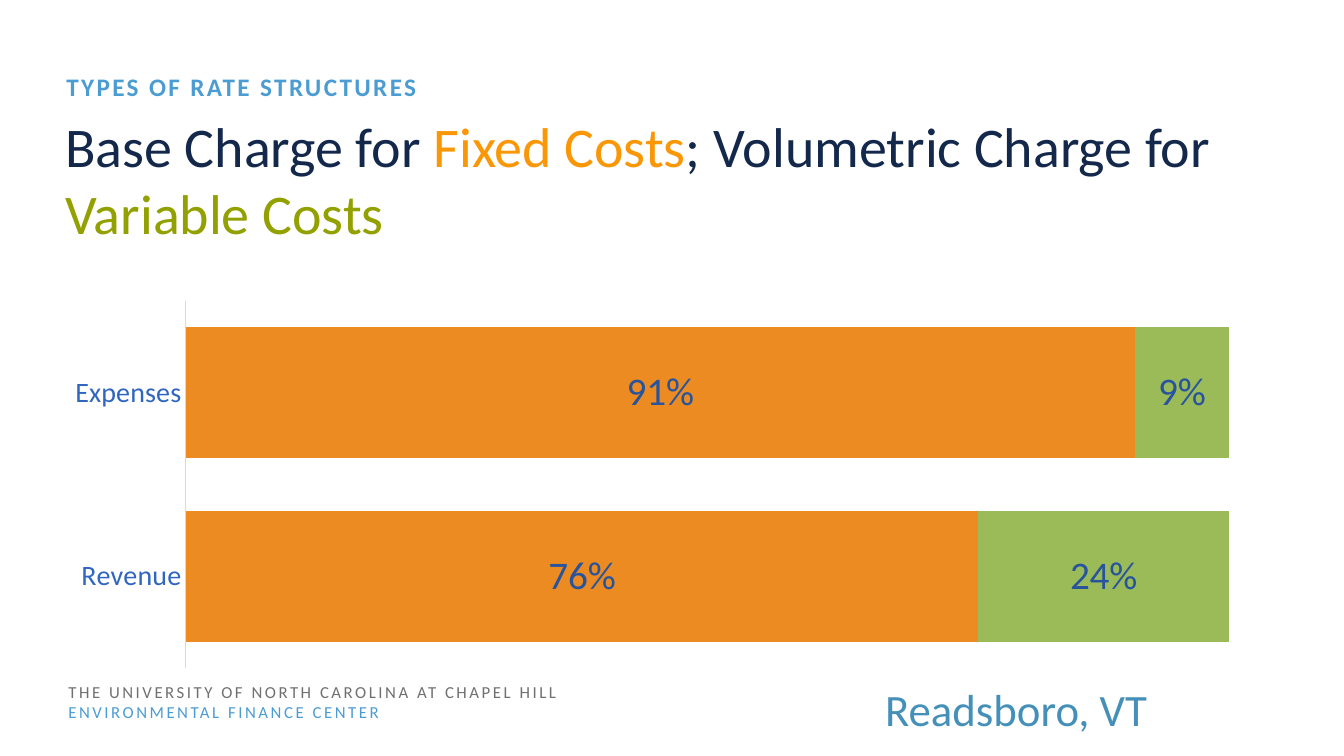
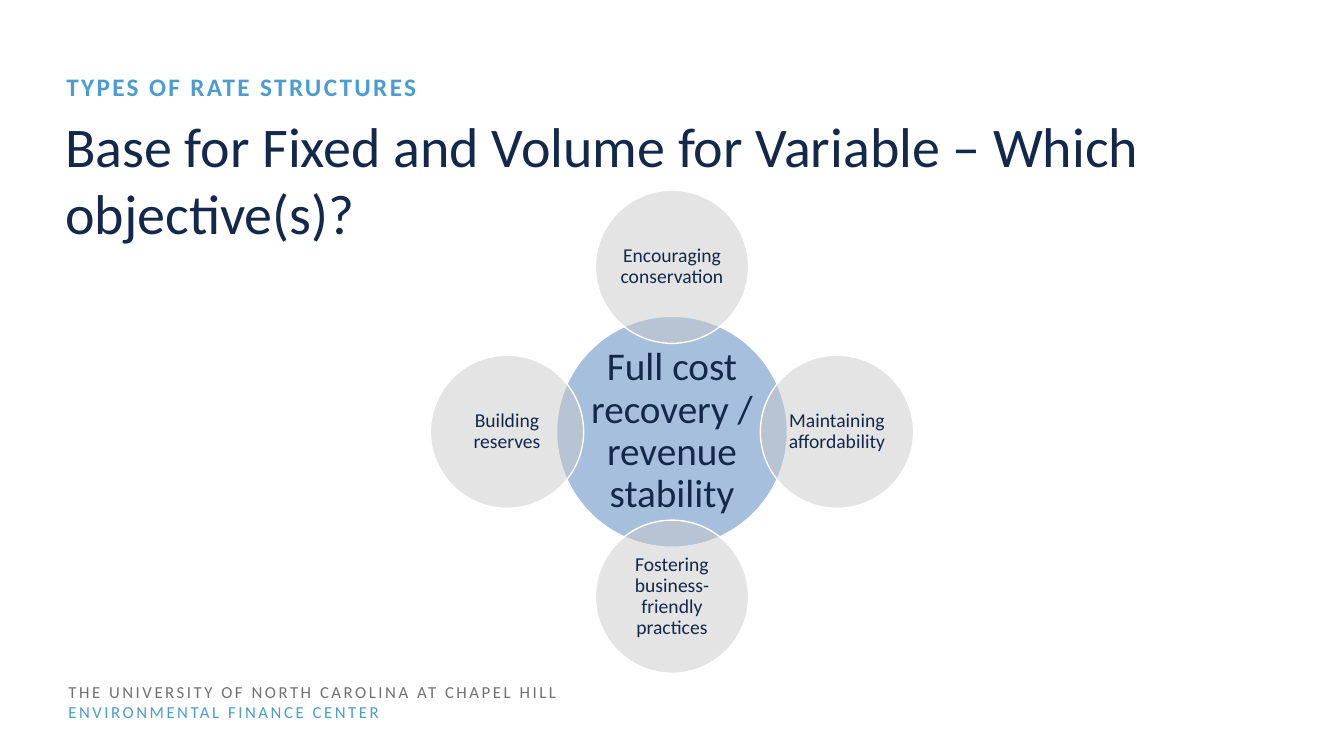
"""Build two slides on rate structures: a chart of cost shares and a ring of objectives."""

from dataclasses import dataclass

from lxml.etree import SubElement as add_element
from pptx import Presentation
from pptx.chart.data import CategoryChartData
from pptx.dml.color import RGBColor
from pptx.enum.chart import XL_CHART_TYPE as ChartType
from pptx.enum.chart import XL_LABEL_POSITION as LabelPosition
from pptx.enum.chart import XL_TICK_MARK as TickMark
from pptx.enum.shapes import MSO_SHAPE as Preset
from pptx.enum.text import MSO_ANCHOR as Anchor
from pptx.enum.text import PP_ALIGN as Align
from pptx.oxml.ns import qn
from pptx.util import Inches, Pt

COLUMNS, ROWS = 40, 22.5
CELL = Inches(1) / 3
BLANK_LAYOUT = 6


@dataclass(frozen=True)
class Theme:
    """Colours and type sizes of the deck."""

    font: str = "Calibri"
    navy: str = "13284B"
    sky: str = "4B9CD3"
    grey: str = "707070"
    orange: str = "FA9706"
    olive: str = "92A000"
    place: str = "4590B8"
    fixed_bar: str = "EB8B21"
    variable_bar: str = "9BBB59"
    bar_label: str = "28549E"
    category: str = "3066BF"
    axis: str = "CDDBF2"
    core: str = "4F81BD"
    satellite: str = "CACACA"
    white: str = "FFFFFF"
    title_size: int = 40
    place_size: int = 32
    large_size: int = 28
    category_size: int = 20
    kicker_size: int = 18
    small_size: int = 14
    footer_size: int = 12


THEME = Theme()


def grid(*cells):
    """Turn grid cells into slide lengths."""
    return [round(cell * CELL) for cell in cells]


def apply_format(target, **values):
    """Set every given attribute on the target."""
    for name, value in values.items():
        setattr(target, name, value)


def style_font(font, size, color, bold=False):
    """Give a font the deck's typeface with a size and colour."""
    apply_format(font, name=THEME.font, size=Pt(size), bold=bold)
    font.color.rgb = RGBColor.from_string(color)


def write_text(frame, lines, size, bold=False, tracking=0, anchor=Anchor.TOP, **para_format):
    """Fill a frame with lines, each a list of (text, colour) spans."""
    apply_format(frame, word_wrap=True, vertical_anchor=anchor)
    for index, line in enumerate(lines):
        para = frame.add_paragraph() if index else frame.paragraphs[0]
        apply_format(para, **para_format)
        for text, color in line:
            span = para.add_run()
            span.text = text
            style_font(span.font, size, color, bold)
            if tracking:
                span._r.get_or_add_rPr().set("spc", str(round(tracking * 100)))


def add_text(page, area, lines, size, **options):
    """Add a text box over an area of the grid."""
    box = page.shapes.add_textbox(*grid(*area))
    write_text(box.text_frame, lines, size, **options)


def add_page(deck, title_spans):
    """Add a page with the shared footer, title and kicker."""
    page = deck.slides.add_slide(deck.slide_layouts[BLANK_LAYOUT])
    footer = [
        [("THE UNIVERSITY OF NORTH CAROLINA AT CHAPEL HILL", THEME.grey)],
        [("ENVIRONMENTAL FINANCE CENTER", THEME.sky)],
    ]
    add_text(page, (1.74, 20.13, 23.49, 1.5), footer, THEME.footer_size,
             tracking=1.8, anchor=Anchor.MIDDLE)
    add_text(page, (1.65, 3.18, 36.72, 2.37), [title_spans], THEME.title_size)
    add_text(page, (1.68, 2.07, 36.72, 0.81), [[("TYPES OF RATE STRUCTURES", THEME.sky)]],
             THEME.kicker_size, bold=True, tracking=1.7, line_spacing=0.9)
    return page


def set_plot_area(chart, **shares):
    """Fix the inner plot area as shares of the chart's size."""
    plot_area = chart.element.find(".//" + qn("c:plotArea"))
    for layout in plot_area.findall(qn("c:layout")):
        plot_area.remove(layout)
    layout = plot_area.makeelement(qn("c:layout"))
    plot_area.insert(0, layout)
    manual = add_element(layout, qn("c:manualLayout"))
    settings = {"layoutTarget": "inner", "xMode": "edge", "yMode": "edge", **shares}
    for name, value in settings.items():
        add_element(manual, qn(f"c:{name}")).set("val", str(value))


def add_share_chart(page, area, categories, series):
    """Add a 100% stacked bar chart from (name, values, colour) series."""
    data = CategoryChartData(number_format="0%")
    data.categories = categories
    for name, values, _ in series:
        data.add_series(name, values)
    chart = page.shapes.add_chart(ChartType.BAR_STACKED_100, *grid(*area), data).chart
    apply_format(chart, has_legend=False, has_title=False)
    style_font(chart.font, THEME.small_size, THEME.navy)
    apply_format(chart.value_axis, visible=False, has_major_gridlines=False)
    axis = chart.category_axis
    apply_format(axis, major_tick_mark=TickMark.NONE, minor_tick_mark=TickMark.NONE)
    style_font(axis.tick_labels.font, THEME.category_size, THEME.category)
    axis.format.line.color.rgb = RGBColor.from_string(THEME.axis)
    axis.format.line.width = Pt(0.75)
    plot = chart.plots[0]
    apply_format(plot, gap_width=40, overlap=100, vary_by_categories=False)
    for bars, (_, _, color) in zip(plot.series, series):
        bars.format.fill.solid()
        bars.format.fill.fore_color.rgb = RGBColor.from_string(color)
        labels = bars.data_labels
        apply_format(labels, show_value=True, position=LabelPosition.CENTER,
                     number_format="0%", number_format_is_linked=False)
        style_font(labels.font, THEME.large_size, THEME.bar_label)
    set_plot_area(chart, x=0.13, y=0, w=0.83, h=1)


def add_circle(page, center, diameter, color, text, size):
    """Add a half-transparent labelled circle around a centre."""
    left, top = (middle - diameter / 2 for middle in center)
    circle = page.shapes.add_shape(Preset.OVAL, *grid(left, top, diameter, diameter))
    circle.shadow.inherit = False
    circle.fill.solid()
    circle.fill.fore_color.rgb = RGBColor.from_string(color)
    fill_color = circle.element.spPr.find(".//" + qn("a:srgbClr"))
    add_element(fill_color, qn("a:alpha")).set("val", "50000")
    circle.line.color.rgb = RGBColor.from_string(THEME.white)
    circle.line.width = Pt(1)
    apply_format(circle.text_frame, margin_left=0, margin_right=0, margin_top=0, margin_bottom=0)
    write_text(circle.text_frame, [[(text, THEME.navy)]], size, anchor=Anchor.MIDDLE,
               alignment=Align.CENTER, line_spacing=0.9)


def add_objective_ring(page, center, core_text, satellites):
    """Add a core circle with a satellite in each (right, down) direction."""
    orbit = 4.91
    add_circle(page, center, 6.87, THEME.core, core_text, THEME.large_size)
    for text, direction in satellites:
        spot = [middle + orbit * step for middle, step in zip(center, direction)]
        add_circle(page, spot, 4.56, THEME.satellite, text, THEME.small_size)


def build_chart_page(deck):
    """Build the page comparing expenses with revenue."""
    page = add_page(deck, [
        ("Base Charge for ", THEME.navy),
        ("Fixed Costs", THEME.orange),
        ("; Volumetric Charge for ", THEME.navy),
        ("Variable Costs", THEME.olive),
    ])
    add_text(page, (9.15, 20.31, 25.29, 1.53), [[("Readsboro, VT", THEME.place)]],
             THEME.place_size, anchor=Anchor.MIDDLE, alignment=Align.RIGHT)
    add_share_chart(page, (0.66, 8.94, 37.41, 10.95), ["Revenue", "Expenses"], [
        ("Series 1", (0.76, 0.91), THEME.fixed_bar),
        ("Series 2", (0.24, 0.09), THEME.variable_bar),
    ])


def build_objectives_page(deck):
    """Build the page with the ring of objectives."""
    page = add_page(deck, [
        ("Base for Fixed and Volume for Variable – Which objective(s)?", THEME.navy),
    ])
    add_objective_ring(page, (COLUMNS / 2, 12.85), "Full cost recovery / revenue stability", [
        ("Encouraging conservation", (0, -1)),
        ("Maintaining affordability", (1, 0)),
        ("Fostering business-friendly practices", (0, 1)),
        ("Building reserves", (-1, 0)),
    ])


def main():
    """Build and save the deck."""
    deck = Presentation()
    deck.slide_width, deck.slide_height = grid(COLUMNS, ROWS)
    build_chart_page(deck)
    build_objectives_page(deck)
    deck.save("out.pptx")


if __name__ == "__main__":
    main()
